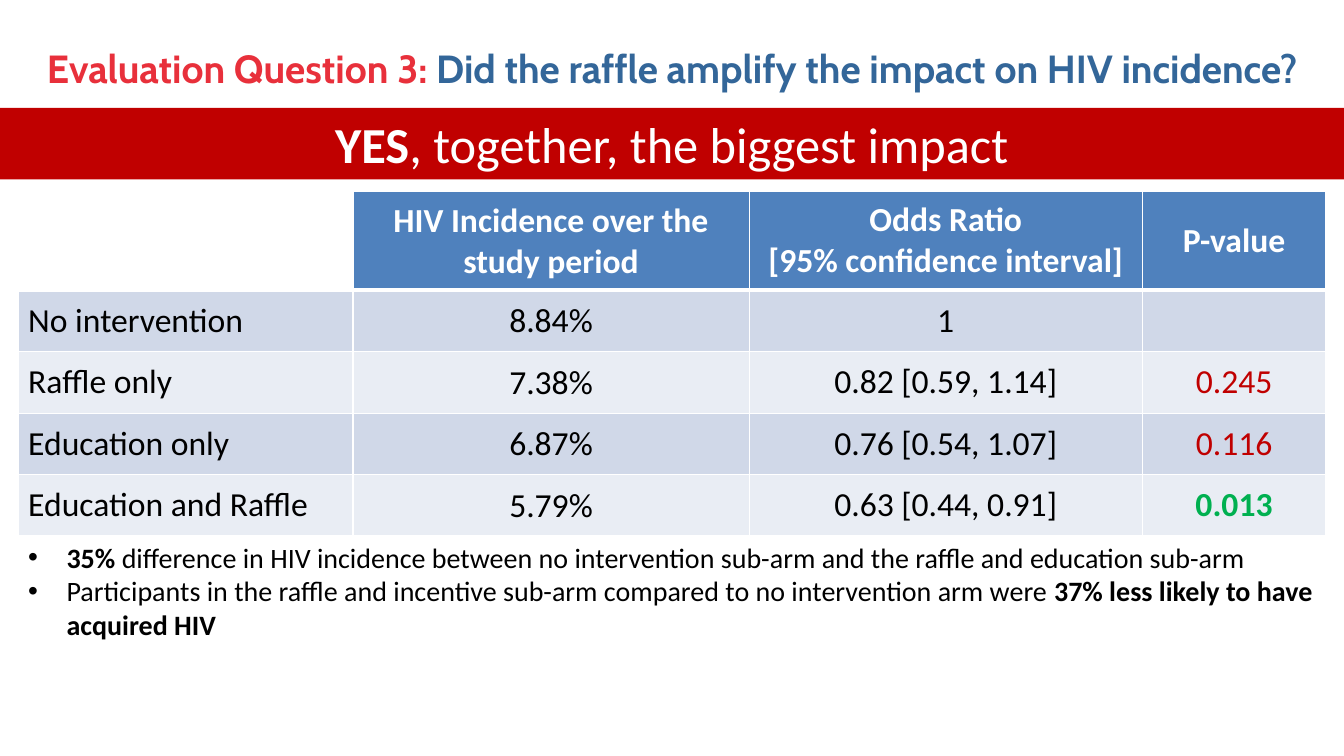
from dataclasses import dataclass

from lxml import etree
from pptx import Presentation
from pptx import util as u
from pptx.dml.color import RGBColor
from pptx.enum import shapes, text
from pptx.oxml import ns

WHITE = RGBColor(0xFF, 0xFF, 0xFF)
BLACK = RGBColor(0x00, 0x00, 0x00)
CRIMSON = RGBColor(0xC0, 0x00, 0x00)
GREEN = RGBColor(0x00, 0xB0, 0x50)
TITLE_RED = RGBColor(0xE8, 0x30, 0x3B)
TITLE_BLUE = RGBColor(0x33, 0x66, 0x99)
HEADER_BLUE = RGBColor(0x4F, 0x81, 0xBD)
BANDS = (RGBColor(0xD0, 0xD8, 0xE8), RGBColor(0xE9, 0xED, 0xF4))

SLIDE_WIDTH, SLIDE_HEIGHT = u.Inches(13.33), u.Inches(7.5)

# Table grid, in percent of the slide's width and height
COLUMNS = (24.91, 29.48, 29.26, 13.65)
ROWS = (13.07,) + (8.13,) * 4
INCIDENCE_COLUMN = 1


@dataclass(frozen=True)
class Span:
    words: str
    bold: bool = False
    color: RGBColor = BLACK


@dataclass(frozen=True)
class Area:
    """A rectangle in percent of the slide's size."""
    left: float
    top: float
    width: float
    height: float

    def emu(self) -> tuple[int, int, int, int]:
        return (across(self.left), down(self.top),
                across(self.width), down(self.height))


@dataclass(frozen=True)
class Outcome:
    arm: str
    incidence: str
    odds: str
    p_value: Span

    def cells(self) -> list[Span]:
        return [Span(self.arm), Span(self.incidence), Span(self.odds), self.p_value]


TITLE_AREA = Area(0, 0.67, 100, 16.67)
BANNER_AREA = Area(0, 14.27, 100, 9.47)
TABLE_AREA = Area(1.35, 25.33, sum(COLUMNS), sum(ROWS))
FINDINGS_AREA = Area(1.35, 70.8, sum(COLUMNS), 14.8)

TITLE = [Span("Evaluation Question 3: ", True, TITLE_RED),
         Span("Did the raffle amplify the impact on HIV incidence?", True, TITLE_BLUE)]
BANNER = [Span("YES", True, WHITE),
          Span(", together, the biggest impact", False, WHITE)]
HEADERS = ([], ["HIV Incidence over the study period"],
           ["Odds Ratio", "[95% confidence interval]"], ["P-value"])
OUTCOMES = (
    Outcome("No intervention", "8.84%", "1", Span("")),
    Outcome("Raffle only", "7.38%", "0.82 [0.59, 1.14]", Span("0.245", color=CRIMSON)),
    Outcome("Education only", "6.87%", "0.76 [0.54, 1.07]", Span("0.116", color=CRIMSON)),
    Outcome("Education and Raffle", "5.79%", "0.63 [0.44, 0.91]",
            Span("0.013", True, GREEN)),
)
FINDINGS = (
    [Span("35% ", True),
     Span("difference in HIV incidence between no intervention sub-arm "
          "and the raffle and education sub-arm")],
    [Span("Participants in the raffle and incentive sub-arm compared to "
          "no intervention arm were "),
     Span("37% less likely to have acquired HIV", True)],
)


def across(percent: float) -> int:
    return round(SLIDE_WIDTH * percent / 100)


def down(percent: float) -> int:
    return round(SLIDE_HEIGHT * percent / 100)


def place(box, area: Area) -> None:
    box.left, box.top, box.width, box.height = area.emu()


def write(para, spans: list[Span], size: float, font: str = "Calibri") -> None:
    for span in spans:
        run = para.add_run()
        run.text = span.words
        run.font.name, run.font.size = font, u.Pt(size)
        run.font.bold, run.font.color.rgb = span.bold, span.color


def add_paragraphs(frame, lines, size: float, align=None, bullet: bool = False) -> None:
    for index, spans in enumerate(lines):
        para = frame.add_paragraph() if index else frame.paragraphs[0]
        if bullet:
            add_bullet(para)
            para.space_before = u.Pt(0)
        para.alignment = align
        write(para, spans, size)


def add_bullet(para) -> None:
    props = para._p.get_or_add_pPr()
    indent = u.Inches(0.38)
    props.set("marL", str(indent))
    props.set("indent", str(-indent))
    etree.SubElement(props, ns.qn("a:buFont")).set("typeface", "Arial")
    etree.SubElement(props, ns.qn("a:buChar")).set("char", "•")


def set_borders(cell, bottom: float) -> None:
    props = cell._tc.get_or_add_tcPr()
    for side, width in (("L", 1), ("R", 1), ("T", 1), ("B", bottom)):
        line = etree.SubElement(props, ns.qn(f"a:ln{side}"), w=str(u.Pt(width)))
        fill = etree.SubElement(line, ns.qn("a:solidFill"))
        etree.SubElement(fill, ns.qn("a:srgbClr")).set("val", str(WHITE))


def fill_cell(cell, lines: list[list[Span]], color, column: int, bottom: float) -> None:
    set_borders(cell, bottom)
    if color is None:
        cell.fill.background()
    else:
        cell.fill.solid()
        cell.fill.fore_color.rgb = color
    cell.vertical_anchor = text.MSO_ANCHOR.MIDDLE
    if column == INCIDENCE_COLUMN:
        cell.margin_left = cell.margin_right = cell.margin_top = u.Inches(0.01)
        cell.margin_bottom = 0
    align = text.PP_ALIGN.CENTER if column else text.PP_ALIGN.LEFT
    add_paragraphs(cell.text_frame, lines, 24, align)


def add_title(page) -> None:
    title = page.shapes.title
    place(title, TITLE_AREA)
    frame = title.text_frame
    frame.auto_size = text.MSO_AUTO_SIZE.NONE
    frame.vertical_anchor = text.MSO_ANCHOR.MIDDLE
    frame.paragraphs[0].alignment = text.PP_ALIGN.CENTER
    write(frame.paragraphs[0], TITLE, 28, "Cabin")


def add_findings(page) -> None:
    body = page.placeholders[1]
    place(body, FINDINGS_AREA)
    body.text_frame.auto_size = text.MSO_AUTO_SIZE.NONE
    body.text_frame.vertical_anchor = text.MSO_ANCHOR.TOP
    add_paragraphs(body.text_frame, FINDINGS, 20, text.PP_ALIGN.LEFT, bullet=True)


def add_results(page) -> None:
    table = page.shapes.add_table(len(ROWS), len(COLUMNS), *TABLE_AREA.emu()).table
    table.horz_banding = False
    for column, width in zip(table.columns, COLUMNS):
        column.width = across(width)
    for row, height in zip(table.rows, ROWS):
        row.height = down(height)
    for column, header in enumerate(HEADERS):
        lines = [[Span(words, True, WHITE)] for words in header]
        fill_cell(table.cell(0, column), lines, HEADER_BLUE if header else None, column, 3)
    for row, outcome in enumerate(OUTCOMES):
        for column, span in enumerate(outcome.cells()):
            lines = [[span]] if span.words else []
            fill_cell(table.cell(row + 1, column), lines, BANDS[row % 2], column, 1)


def add_banner(page) -> None:
    banner = page.shapes.add_shape(shapes.MSO_SHAPE.RECTANGLE, *BANNER_AREA.emu())
    banner.shadow.inherit = False
    banner.fill.solid()
    banner.fill.fore_color.rgb = CRIMSON
    banner.line.fill.background()
    banner.text_frame.word_wrap = True
    banner.text_frame.vertical_anchor = text.MSO_ANCHOR.TOP
    add_paragraphs(banner.text_frame, [BANNER], 36, text.PP_ALIGN.CENTER)


def main() -> None:
    deck = Presentation()
    deck.slide_width, deck.slide_height = SLIDE_WIDTH, SLIDE_HEIGHT
    page = deck.slides.add_slide(deck.slide_layouts[1])
    add_title(page)
    add_findings(page)
    add_results(page)
    add_banner(page)
    deck.save("out.pptx")


if __name__ == "__main__":
    main()
